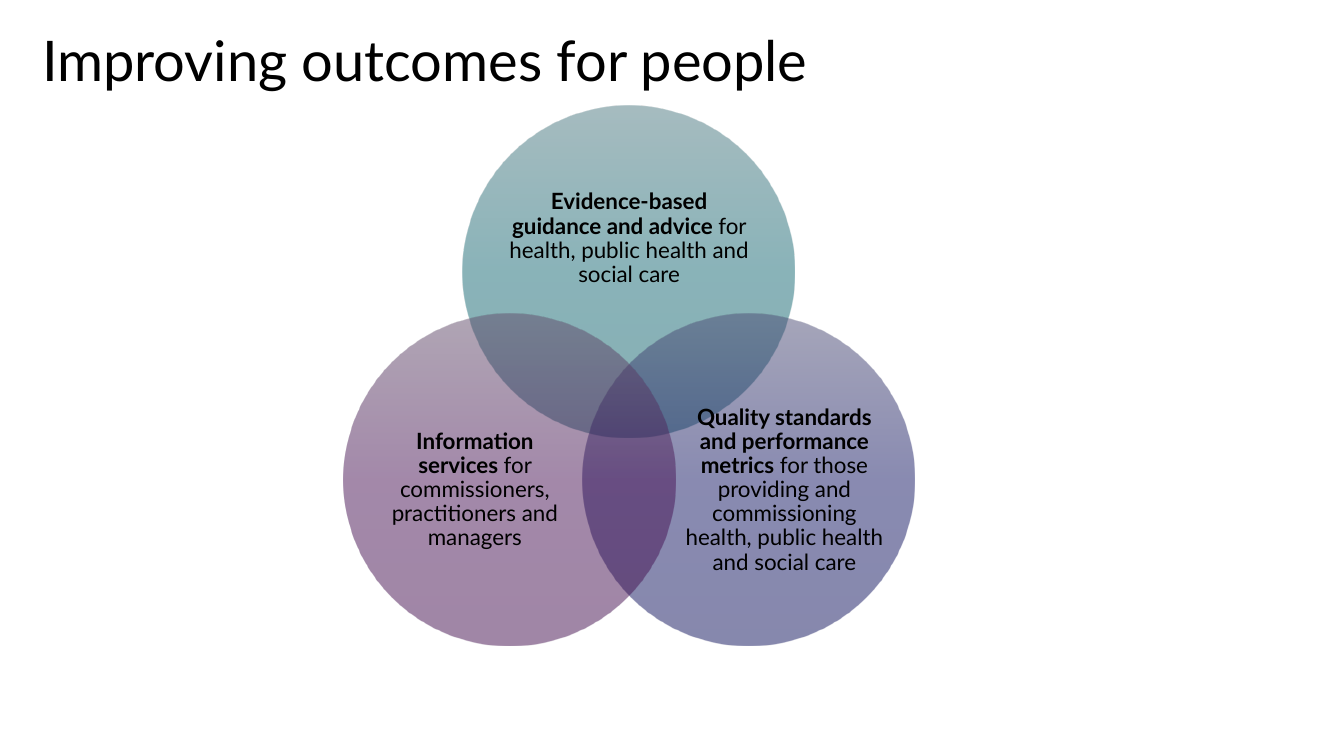
from lxml import etree
from pptx import Presentation
from pptx.enum.shapes import MSO_SHAPE
from pptx.enum.text import MSO_ANCHOR, PP_ALIGN
from pptx.dml.color import RGBColor
from pptx.oxml.ns import qn
from pptx.util import Inches, Pt

OVAL = MSO_SHAPE.OVAL
MIDDLE = MSO_ANCHOR.MIDDLE
LEFT, CENTER = PP_ALIGN.LEFT, PP_ALIGN.CENTER

COLORS = {
    "text": "000000",
    "teal": ["4D7880", "146772", "0E5F69"],
    "blue": ["4D4D74", "131663", "0E115B"],
    "plum": ["614D6A", "471254", "410D4D"],
}
STOPS = [0, 50, 100]
SIZE = 3.29

prs = Presentation()
prs.slide_width, prs.slide_height = Inches(13.33), Inches(7.5)
slide = prs.slides.add_slide(prs.slide_layouts[6])


def add_text(text, box, bold="", size=16, align=CENTER, inset=0, after=0):
    frame = slide.shapes.add_textbox(*[Inches(v) for v in box]).text_frame
    frame.word_wrap = True
    frame.vertical_anchor = MIDDLE
    frame.margin_left = frame.margin_right = Inches(inset)
    frame.margin_top = frame.margin_bottom = Inches(inset / 2)
    para = frame.paragraphs[0]
    para.alignment = align
    para.line_spacing = 0.9
    para.space_after = Pt(after)
    for part, heavy in ((bold, True), (text, False)):
        if part:
            run = para.add_run()
            run.text = part
            run.font.name = "Lato"
            run.font.size = Pt(size)
            run.font.bold = heavy
            run.font.color.rgb = RGBColor.from_string(COLORS["text"])


def add_circle(left, top, shades):
    oval = slide.shapes.add_shape(OVAL, *[Inches(v) for v in (left, top, SIZE, SIZE)])
    oval.shadow.inherit = False
    oval.line.fill.background()
    oval.fill.gradient()
    oval.fill.gradient_angle = 270
    stops = next(oval._element.iter(qn("a:gsLst")))
    for old in list(stops):
        stops.remove(old)
    for pos, shade in zip(STOPS, shades):
        stop = etree.SubElement(stops, qn("a:gs"), pos=str(pos * 1000))
        color = etree.SubElement(stop, qn("a:srgbClr"), val=shade)
        etree.SubElement(color, qn("a:alpha"), val="50000")


circles = [
    (4.59, 1.05, "teal", (5.03, 1.63, 2.42, 1.48),
     "Evidence-based guidance and advice ",
     "for health, public health and social care"),
    (5.78, 3.11, "blue", (6.79, 3.96, 1.98, 1.81),
     "Quality standards and performance metrics",
     " for those providing and commissioning health, public health and social care"),
    (3.41, 3.11, "plum", (3.72, 3.96, 1.98, 1.81),
     "Information services ",
     "for commissioners, practitioners and managers"),
]
for left, top, hue, box, bold, text in circles:
    add_circle(left, top, COLORS[hue])
    add_text(text, box, bold=bold, after=5.6)

add_text("Improving outcomes for people", (0.32, -0.25, 12.69, 1.76),
         size=40, align=LEFT, inset=0.1)

prs.save("out.pptx")
